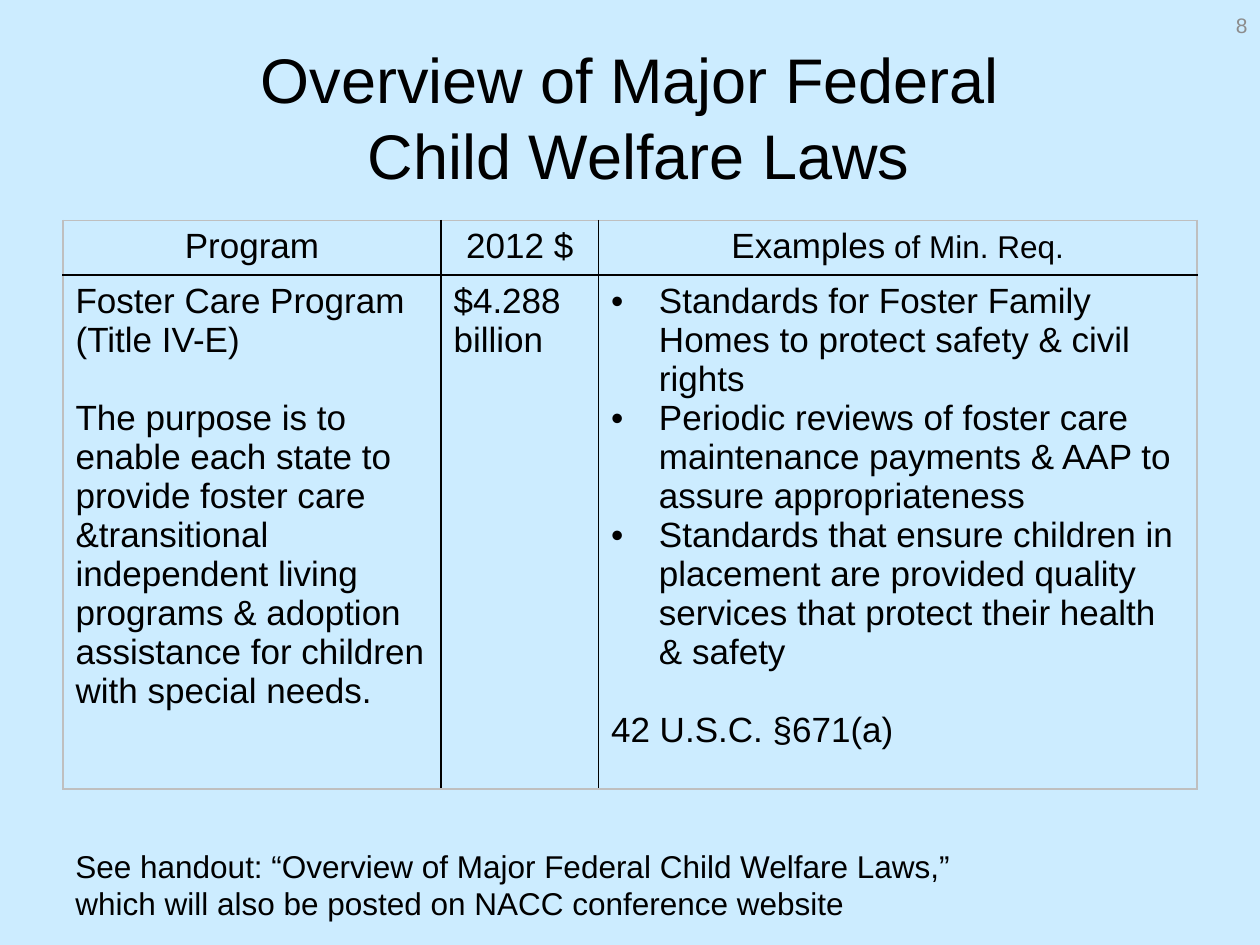
from lxml import etree
from pptx import Presentation
from pptx.dml.color import RGBColor
from pptx.enum.text import MSO_ANCHOR, MSO_AUTO_SIZE, PP_ALIGN
from pptx.oxml.ns import qn
from pptx.util import Inches, Pt

CENTER, RIGHT, LEFT = PP_ALIGN.CENTER, PP_ALIGN.RIGHT, PP_ALIGN.LEFT
TOP, MIDDLE = MSO_ANCHOR.TOP, MSO_ANCHOR.MIDDLE
GROW = MSO_AUTO_SIZE.SHAPE_TO_FIT_TEXT
BACKGROUND = RGBColor(0xCC, 0xEC, 0xFF)
BLACK = RGBColor(0x00, 0x00, 0x00)
GRAY = RGBColor(0x8C, 0x8C, 0x8C)
EDGE_GRAY = RGBColor(0xBF, 0xBF, 0xBF)
FONT = "Arial"
BODY_SIZE = 20
BLANK_LINE = Pt(22.3)

COLUMN_WIDTHS = (3, 1.25, 4.75)
ROW_HEIGHTS = (0.41, 3.82)
HEADERS = (("Program",), ("2012 $",), ("Examples", " of Min. Req."))
PROGRAM = (
    "Foster Care Program (Title IV-E)",
    "The purpose is to enable each state to provide foster care &transitional "
    "independent living programs & adoption assistance for children with special needs.",
)
AMOUNT = "$4.288\vbillion"
REQUIREMENTS = (
    "Standards for Foster Family Homes to protect safety & civil rights",
    "Periodic reviews of foster care maintenance payments & AAP to assure appropriateness",
    "Standards that ensure children in placement are provided quality services "
    "that protect their health & safety",
)
CITATION = "42 U.S.C. §671(a)"


def format_runs(paragraph, size, color=BLACK):
    for run in paragraph.runs:
        run.font.name = FONT
        run.font.size = Pt(size)
        run.font.bold = False
        run.font.color.rgb = color


def add_text(slide, box, text, size, color=BLACK, align=LEFT, anchor=TOP):
    shape = slide.shapes.add_textbox(*map(Inches, box))
    frame = shape.text_frame
    frame.word_wrap = True
    frame.vertical_anchor = anchor
    frame.text = text
    paragraph = frame.paragraphs[0]
    paragraph.alignment = align
    format_runs(paragraph, size, color)
    return shape


def set_borders(cell, colors):
    properties = cell._tc.get_or_add_tcPr()
    for index, (side, color) in enumerate(colors.items()):
        line = etree.Element(qn(f"a:ln{side}"), w=str(Pt(1)))
        fill = etree.SubElement(line, qn("a:solidFill"))
        etree.SubElement(fill, qn("a:srgbClr"), val=str(color))
        properties.insert(index, line)


def add_bullet(paragraph):
    properties = paragraph._p.get_or_add_pPr()
    properties.set("marL", str(Inches(0.38)))
    properties.set("indent", str(-Inches(0.38)))
    etree.SubElement(properties, qn("a:buFont"), typeface=FONT)
    etree.SubElement(properties, qn("a:buChar"), char="•")


def fill_cell(cell, texts, bulleted=()):
    frame = cell.text_frame
    for index, text in enumerate(texts):
        paragraph = frame.paragraphs[0] if index == 0 else frame.add_paragraph()
        paragraph.text = text
        if text in bulleted:
            add_bullet(paragraph)
        elif index > 0:
            paragraph.space_before = BLANK_LINE
        format_runs(paragraph, BODY_SIZE)


def fill_header(cell, parts):
    paragraph = cell.text_frame.paragraphs[0]
    paragraph.alignment = CENTER
    for part in parts:
        paragraph.add_run().text = part
    format_runs(paragraph, BODY_SIZE)
    for run in paragraph.runs[1:]:
        run.font.size = Pt(18)


def add_program_table(slide, box):
    row_count, column_count = len(ROW_HEIGHTS), len(COLUMN_WIDTHS)
    table = slide.shapes.add_table(row_count, column_count, *map(Inches, box)).table
    table.first_row = False
    table.horz_banding = False
    for column, width in zip(table.columns, COLUMN_WIDTHS):
        column.width = Inches(width)
    for row, height in zip(table.rows, ROW_HEIGHTS):
        row.height = Inches(height)
    for row in range(row_count):
        for column in range(column_count):
            cell = table.cell(row, column)
            cell.fill.background()
            set_borders(cell, {
                "L": BLACK if column > 0 else EDGE_GRAY,
                "R": BLACK if column < column_count - 1 else EDGE_GRAY,
                "T": BLACK if row > 0 else EDGE_GRAY,
                "B": BLACK if row < row_count - 1 else EDGE_GRAY,
            })
    for column, parts in enumerate(HEADERS):
        fill_header(table.cell(0, column), parts)
    fill_cell(table.cell(1, 0), PROGRAM)
    fill_cell(table.cell(1, 1), (AMOUNT,))
    fill_cell(table.cell(1, 2), REQUIREMENTS + (CITATION,), REQUIREMENTS)


def main():
    presentation = Presentation()
    presentation.slide_width = Inches(10)
    presentation.slide_height = Inches(7.5)
    slide = presentation.slides.add_slide(presentation.slide_layouts[6])
    slide.background.fill.solid()
    slide.background.fill.fore_color.rgb = BACKGROUND

    add_text(slide, (0.5, 0.3, 9, 1.25),
             "Overview of Major Federal\v Child Welfare Laws", 36,
             align=CENTER, anchor=MIDDLE)
    add_program_table(slide, (0.5, 1.75, 9, sum(ROW_HEIGHTS)))
    handout = add_text(slide, (0.5, 6.67, 7.75, 0.71),
                       "See handout: “Overview of Major Federal Child Welfare Laws,” "
                       "which will also be posted on NACC conference website", 18)
    handout.text_frame.auto_size = GROW
    add_text(slide, (7.67, 0, 2.33, 0.4), "8", 12, GRAY, RIGHT, MIDDLE)
    presentation.save("out.pptx")


if __name__ == "__main__":
    main()
